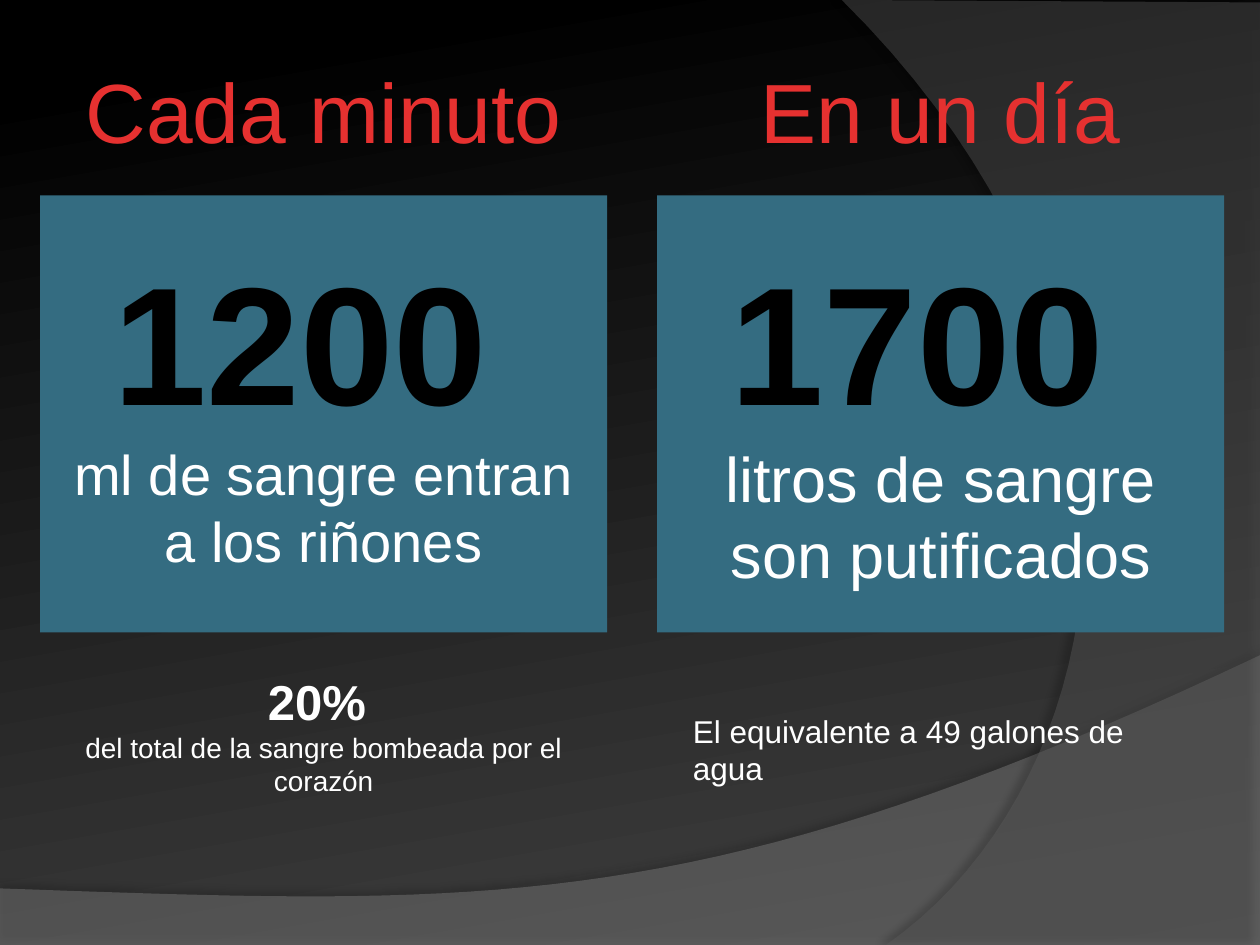
from lxml import etree
from pptx import Presentation, util as u
from pptx.dml.color import RGBColor
from pptx.enum import shapes, text
from pptx.oxml import ns

WHITE, BLACK, RED, TEAL = "FFFFFF", "000000", "E63130", "346C81"
COLUMN_WIDTH = 11.43


def color(hex_string):
    return RGBColor.from_string(hex_string)


def add_run(paragraph, content, *, size, fill=WHITE, bold=False, font="Arial"):
    run = paragraph.add_run()
    run.text = content
    run.font.name, run.font.size, run.font.bold = font, u.Pt(size), bold
    run.font.color.rgb = color(fill)


def bezier(start, control_1, control_2, end, steps=40):
    """Return the points of a cubic curve, both ends included."""
    points = []
    for step in range(steps + 1):
        t = step / steps
        weights = ((1 - t) ** 3, 3 * t * (1 - t) ** 2, 3 * t * t * (1 - t), t ** 3)
        corners = (start, control_1, control_2, end)
        points.append(tuple(sum(w * c[axis] for w, c in zip(weights, corners))
                            for axis in (0, 1)))
    return points


class SlideBuilder:
    def __init__(self, slide):
        self.slide = slide

    def background(self, start, end, angle):
        fill = self.slide.background.fill
        fill.gradient()
        fill.gradient_angle = 360 - angle
        for stop, (position, value) in zip(fill.gradient_stops, (start, end)):
            stop.position, stop.color.rgb = position, color(value)

    def band(self, points, *, fill, opacity, shadow_opacity, distance, direction):
        """Draw a translucent outline with a soft black shadow."""
        points = [(u.Cm(x), u.Cm(y)) for x, y in points]
        builder = self.slide.shapes.build_freeform(*points[0])
        builder.add_line_segments(points[1:], close=True)
        shape = builder.convert_to_shape()
        shape.line.fill.background()
        shape.fill.solid()
        shape.fill.fore_color.rgb = color(fill)
        shape.shadow.inherit = False
        properties = shape.fill._xPr
        solid = properties.find(ns.qn("a:solidFill"))[0]
        etree.SubElement(solid, ns.qn("a:alpha"), val=str(opacity * 1000))
        shadow = etree.SubElement(
            properties.find(ns.qn("a:effectLst")), ns.qn("a:outerShdw"),
            blurRad=str(u.Pt(4)), dist=str(u.Pt(distance)),
            dir=str(direction * 60000), algn="ctr", rotWithShape="0")
        shade = etree.SubElement(shadow, ns.qn("a:srgbClr"), val=BLACK)
        etree.SubElement(shade, ns.qn("a:alpha"), val=str(shadow_opacity * 1000))

    def panel(self, parent, left, top, width, height):
        shape = parent.shapes.add_shape(
            shapes.MSO_SHAPE.RECTANGLE, *map(u.Cm, (left, top, width, height)))
        shape.shadow.inherit = False
        shape.fill.solid()
        shape.fill.fore_color.rgb = color(TEAL)
        shape.line.fill.background()

    def text(self, parent, left, top, width, height, lines,
             align=text.PP_ALIGN.CENTER):
        """Write (content, format) lines as one paragraph with line breaks."""
        box = parent.shapes.add_textbox(*map(u.Cm, (left, top, width, height)))
        box.text_frame.word_wrap = True
        paragraph = box.text_frame.paragraphs[0]
        paragraph.alignment = align
        for index, (content, style) in enumerate(lines):
            if index:
                paragraph.add_line_break()
            add_run(paragraph, content, **style)

    def fact(self, left, heading, heading_width, number, caption, caption_size,
             height):
        group = self.slide.shapes.add_group_shape()
        self.panel(group, left, 3.94, COLUMN_WIDTH, 8.81)
        heading_left = left + (COLUMN_WIDTH - heading_width) / 2
        self.text(group, heading_left, 1.07, heading_width, 2.31,
                  [(heading, dict(size=48, fill=RED))])
        self.text(group, left, 4.67, COLUMN_WIDTH, height,
                  [(number + " ", dict(size=96, fill=BLACK, bold=True)),
                   (caption, dict(size=caption_size))])


def main():
    presentation = Presentation()
    presentation.slide_width, presentation.slide_height = u.Cm(25.4), u.Cm(19.05)
    slide = presentation.slides.add_slide(presentation.slide_layouts[6])
    builder = SlideBuilder(slide)
    builder.background((0.08, BLACK), (1, "434343"), angle=80)

    lower_curve = bezier((25.4, 13.21), (14.2, 18.52), (9.93, 18.26), (0, 17.91))
    builder.band([(0, 19.05), (25.4, 19.05)] + lower_curve, fill="7F7F7F",
                 opacity=45, shadow_opacity=35, distance=3.5, direction=270)
    side_curve = bezier((17.86, 19.05), (22.63, 15.72), (24.05, 6.99), (16.97, 0))
    builder.band([(25.4, 0.05), (25.4, 19.05)] + side_curve, fill="5E5E5E",
                 opacity=40, shadow_opacity=45, distance=4, direction=180)

    builder.fact(0.81, "Cada minuto", 12.04, "1200",
                 "ml de sangre entran a los riñones", 32, 7.09)
    builder.fact(13.25, "En un día", 10.87, "1700",
                 "litros de sangre son putificados", 36, 7.44)
    builder.text(slide, 0.81, 13.41, COLUMN_WIDTH, 2.82,
                 [("20% ", dict(size=28, bold=True)),
                  ("del total de la sangre bombeada por el corazón", dict(size=16))])
    builder.text(slide, 13.72, 14.22, 9.88, 1.8,
                 [("El equivalente a 49 galones de agua", dict(size=18))],
                 align=text.PP_ALIGN.LEFT)
    presentation.save("out.pptx")


if __name__ == "__main__":
    main()
